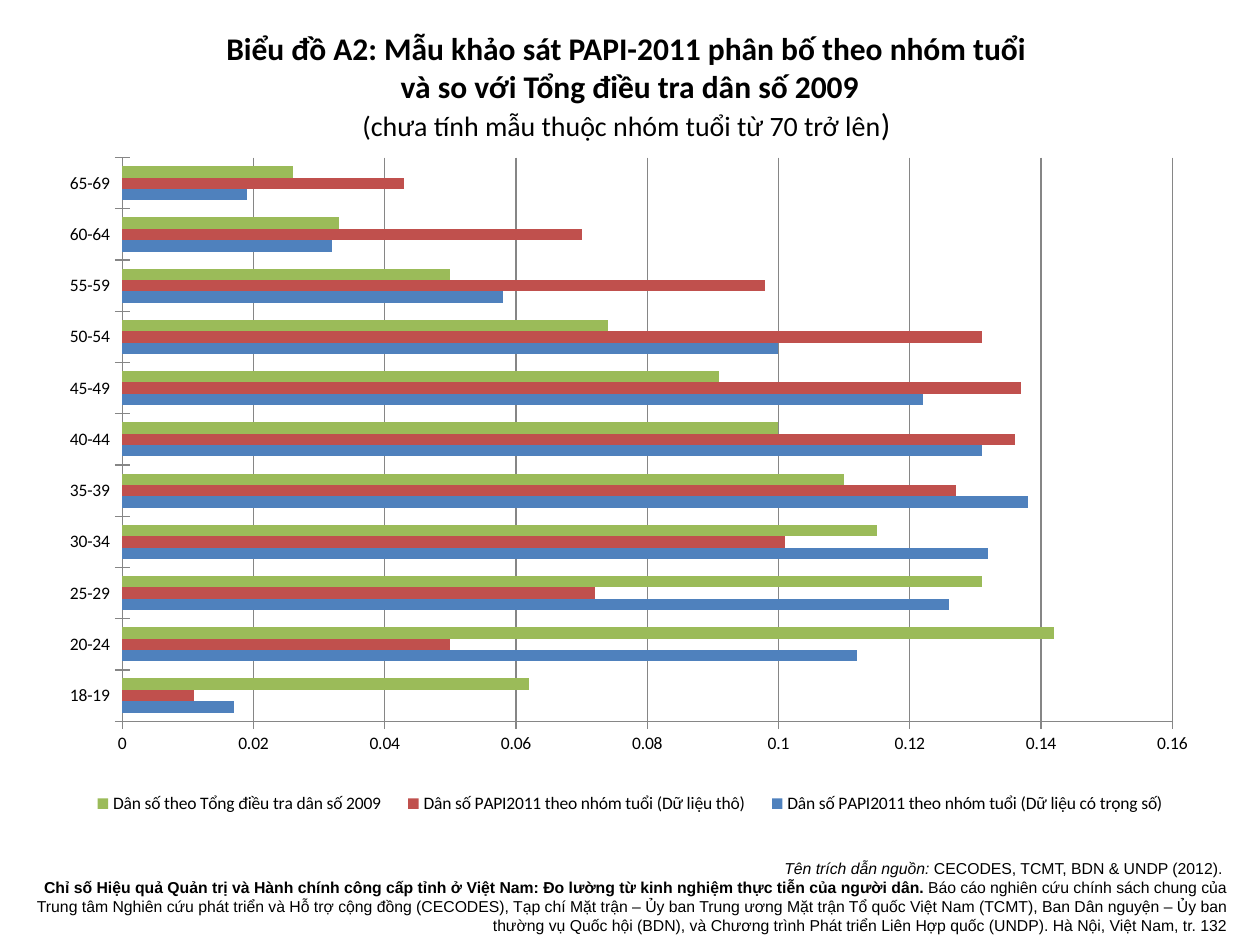
from dataclasses import dataclass

from lxml.etree import SubElement
from pptx import Presentation
from pptx.chart.data import CategoryChartData
from pptx.dml.color import RGBColor
from pptx.enum.chart import XL_CHART_TYPE as ChartType
from pptx.enum.chart import XL_LEGEND_POSITION as LegendPosition
from pptx.enum.chart import XL_TICK_MARK as TickMark
from pptx.enum.text import MSO_AUTO_SIZE as AutoSize
from pptx.enum.text import PP_ALIGN as Align
from pptx.oxml.ns import qn
from pptx.util import Emu, Pt

EMU_PER_PX = 914400 / 126


@dataclass(frozen=True)
class Theme:
    text: RGBColor = RGBColor(0, 0, 0)
    axis: RGBColor = RGBColor(0x86, 0x86, 0x86)
    weighted: RGBColor = RGBColor(0x4F, 0x81, 0xBD)
    raw: RGBColor = RGBColor(0xC0, 0x50, 0x4D)
    census: RGBColor = RGBColor(0x9B, 0xBB, 0x59)
    main_font: str = "Calibri"
    source_font: str = "Arial"
    title_size: int = 18
    subtitle_size: int = 16
    chart_size: int = 10
    source_size: int = 9


THEME = Theme()

AGE_GROUPS = ["18-19"] + [f"{age}-{age + 4}" for age in range(20, 70, 5)]
SERIES = [
    ("Dân số PAPI2011 theo nhóm tuổi (Dữ liệu có trọng số)", THEME.weighted,
     [0.017, 0.112, 0.126, 0.132, 0.138, 0.131, 0.122, 0.1, 0.058, 0.032, 0.019]),
    ("Dân số PAPI2011 theo nhóm tuổi (Dữ liệu thô)", THEME.raw,
     [0.011, 0.05, 0.072, 0.101, 0.127, 0.136, 0.137, 0.131, 0.098, 0.07, 0.043]),
    ("Dân số theo Tổng điều tra dân số 2009", THEME.census,
     [0.062, 0.142, 0.131, 0.115, 0.11, 0.1, 0.091, 0.074, 0.05, 0.033, 0.026]),
]


def px(length):
    return Emu(round(length * EMU_PER_PX))


def style_font(font, name, size, bold=False, italic=False):
    font.name = name
    font.size = Pt(size)
    font.bold = bold
    font.italic = italic
    font.color.rgb = THEME.text


def add_text_frame(slide, left, top, width, height):
    box = slide.shapes.add_textbox(px(left), px(top), px(width), px(height))
    frame = box.text_frame
    frame.word_wrap = True
    frame.auto_size = AutoSize.SHAPE_TO_FIT_TEXT
    return frame


def add_run(paragraph, text, *style, **flags):
    run = paragraph.add_run()
    run.text = text
    style_font(run.font, *style, **flags)


def add_title(slide):
    frame = add_text_frame(slide, 84, 23, 1092, 127)
    frame.text = ("Biểu đồ A2: Mẫu khảo sát PAPI-2011 phân bố theo nhóm tuổi \n"
                  "và so với Tổng điều tra dân số 2009")
    for paragraph in frame.paragraphs:
        style_font(paragraph.runs[0].font, THEME.main_font, THEME.title_size, bold=True)
    subtitle = frame.add_paragraph()
    add_run(subtitle, "(chưa tính mẫu thuộc nhóm tuổi từ 70 trở lên",
            THEME.main_font, THEME.subtitle_size)
    add_run(subtitle, ") ", THEME.main_font, THEME.title_size)
    for paragraph in frame.paragraphs:
        paragraph.alignment = Align.CENTER


def set_layout(element, index, **settings):
    """Give a plot area or legend a manual layout, as fractions of the chart."""
    for old_layout in element.findall(qn("c:layout")):
        element.remove(old_layout)
    layout = SubElement(element, qn("c:layout"))
    manual = SubElement(layout, qn("c:manualLayout"))
    for name, value in settings.items():
        SubElement(manual, qn(f"c:{name}")).set("val", str(value))
    element.insert(index, layout)


def style_axis(axis):
    axis.major_tick_mark = TickMark.CROSS
    axis.minor_tick_mark = TickMark.NONE
    axis.format.line.color.rgb = THEME.axis
    axis.format.line.width = Pt(0.75)


def add_age_chart(slide):
    data = CategoryChartData(number_format="General")
    data.categories = AGE_GROUPS
    for name, _, values in SERIES:
        data.add_series(name, values)
    chart = slide.shapes.add_chart(ChartType.BAR_CLUSTERED, px(53), px(157),
                                   px(1154), px(688), data).chart
    chart.has_title = False
    style_font(chart.font, THEME.main_font, THEME.chart_size)

    plot = chart.plots[0]
    plot.gap_width = 150
    plot.vary_by_categories = False
    for series, (_, color, _) in zip(plot.series, SERIES):
        series.format.fill.solid()
        series.format.fill.fore_color.rgb = color

    style_axis(chart.category_axis)
    value_axis = chart.value_axis
    style_axis(value_axis)
    value_axis.minimum_scale, value_axis.maximum_scale = 0, 0.16
    value_axis.major_unit = 0.02
    value_axis.has_major_gridlines = True
    gridline = value_axis.major_gridlines.format.line
    gridline.color.rgb = THEME.axis
    gridline.width = Pt(0.75)

    chart.has_legend = True
    legend = chart.legend
    legend.position = LegendPosition.BOTTOM
    legend.include_in_layout = False
    edges = {"xMode": "edge", "yMode": "edge"}
    plot_area = chart.element.find(f".//{qn('c:plotArea')}")
    set_layout(plot_area, 0, layoutTarget="inner", **edges, x=0.06, y=0, w=0.91, h=0.82)
    legend_element = chart.element.find(f".//{qn('c:legend')}")
    set_layout(legend_element, 1, **edges, x=0.02, y=0.92, w=0.96, h=0.04)


def add_source(slide):
    paragraph = add_text_frame(slide, 21, 853, 1218, 89).paragraphs[0]
    paragraph.alignment = Align.RIGHT
    style = THEME.source_font, THEME.source_size
    add_run(paragraph, "Tên trích dẫn nguồn:", *style, italic=True)
    add_run(paragraph, " CECODES, TCMT, BDN & UNDP (2012). ", *style)
    paragraph.add_line_break()
    add_run(paragraph,
            "Chỉ số Hiệu quả Quản trị và Hành chính công cấp tỉnh ở Việt Nam: "
            "Đo lường từ kinh nghiệm thực tiễn của người dân. ", *style, bold=True)
    add_run(paragraph,
            "Báo cáo nghiên cứu chính sách chung của Trung tâm Nghiên cứu phát triển "
            "và Hỗ trợ cộng đồng (CECODES), Tạp chí Mặt trận – Ủy ban Trung ương "
            "Mặt trận Tổ quốc Việt Nam (TCMT), Ban Dân nguyện – Ủy ban thường vụ "
            "Quốc hội (BDN), và Chương trình Phát triển Liên Hợp quốc (UNDP). "
            "Hà Nội, Việt Nam, tr. 132", *style)


def main():
    presentation = Presentation()
    presentation.slide_width, presentation.slide_height = px(1260), px(945)
    slide = presentation.slides.add_slide(presentation.slide_layouts[6])
    add_title(slide)
    add_age_chart(slide)
    add_source(slide)
    presentation.save("out.pptx")


if __name__ == "__main__":
    main()
